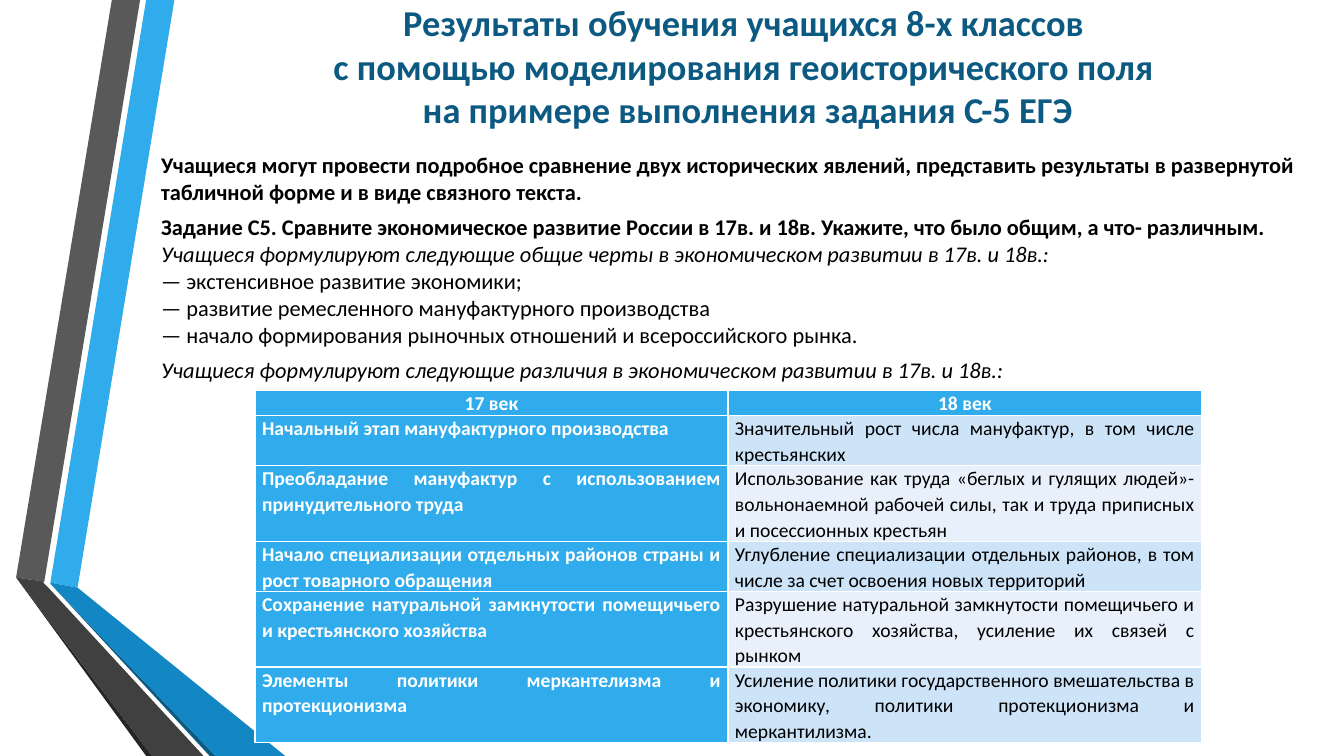
from pptx import Presentation
from pptx import util as u
from pptx.dml.color import RGBColor
from pptx.enum import text

PX = 9144
FONT = "Calibri"
WHITE = RGBColor(0xFF, 0xFF, 0xFF)
BLACK = RGBColor(0x00, 0x00, 0x00)
NAVY = RGBColor(0x0C, 0x5A, 0x82)
BLUE = RGBColor(0x12, 0x87, 0xC3)
SKY = RGBColor(0x30, 0xAC, 0xEC)
SHADE = RGBColor(0x26, 0x26, 0x26)
CHARCOAL = RGBColor(0x40, 0x40, 0x40)
GREY = RGBColor(0x59, 0x59, 0x59)
BAND_DARK = RGBColor(0xCD, 0xE3, 0xF8)
BAND_LIGHT = RGBColor(0xE8, 0xF1, 0xFB)

RIBBONS = [
    (SKY, [(50, 578), (77, 583), (173, 0), (145, 0)]),
    (GREY, [(139, 0), (111, 0), (16, 573), (44, 577)]),
    (SHADE, [(16, 573), (145, 750), (151, 750)]),
    (NAVY, [(50, 579), (208, 750), (214, 750)]),
    (BLUE, [(50, 579), (214, 750), (283, 750), (77, 583), (50, 578)]),
    (CHARCOAL, [(202, 750), (48, 583), (43, 578), (44, 577), (16, 573), (151, 750)]),
]

TITLE = (
    "Результаты обучения учащихся 8-х классов \v"
    "с помощью моделирования геоисторического поля \v"
    "на примере выполнения задания С-5 ЕГЭ"
)

BODY = [
    ("Учащиеся могут провести подробное сравнение двух исторических явлений, "
     "представить результаты в развернутой", "bold", 0),
    ("табличной форме и в виде связного текста.", "bold", 0),
    ("Задание С5. Сравните экономическое развитие России в 17в. и 18в. "
     "Укажите, что было общим, а что- различным.", "bold", 6),
    ("Учащиеся формулируют следующие общие черты в экономическом развитии "
     "в 17в. и 18в.:", "italic", 0),
    ("— экстенсивное развитие экономики;", "plain", 0),
    ("— развитие ремесленного мануфактурного производства", "plain", 0),
    ("— начало формирования рыночных отношений и всероссийского рынка.", "plain", 0),
    ("Учащиеся формулируют следующие различия в экономическом развитии "
     "в 17в. и 18в.:", "italic", 6),
]

COLUMNS = [469, 470]
ROW_HEIGHTS = [23, 48, 72, 48, 72, 72]
CENTURIES = [
    ("17 век", "18 век"),
    ("Начальный этап мануфактурного производства",
     "Значительный рост числа мануфактур, в том числе крестьянских"),
    ("Преобладание мануфактур с использованием принудительного труда",
     "Использование как труда «беглых и гулящих людей»- вольнонаемной рабочей силы, "
     "так и труда приписных и посессионных крестьян"),
    ("Начало специализации отдельных районов страны и рост товарного обращения",
     "Углубление специализации отдельных районов, в том числе за счет освоения "
     "новых территорий"),
    ("Сохранение натуральной замкнутости помещичьего и крестьянского хозяйства",
     "Разрушение натуральной замкнутости помещичьего и крестьянского хозяйства, "
     "усиление их связей с рынком"),
    ("Элементы политики меркантелизма и протекционизма",
     "Усиление политики государственного вмешательства в экономику, политики "
     "протекционизма и меркантилизма."),
]


class SlideBuilder:
    def __init__(self, page, font):
        self.page = page
        self.font = font

    def format(self, para, size, color, bold=False, italic=False):
        for span in para.runs:
            span.font.name = self.font
            span.font.size = u.Pt(size)
            span.font.color.rgb = color
            span.font.bold = bold
            span.font.italic = italic

    def ribbon(self, color, points):
        outline = self.page.shapes.build_freeform(*points[0], scale=PX)
        outline.add_line_segments(points[1:], close=True)
        shape = outline.convert_to_shape()
        shape.shadow.inherit = False
        shape.fill.solid()
        shape.fill.fore_color.rgb = color
        shape.line.fill.background()

    def text_frame(self, left, top, width, height):
        box = self.page.shapes.add_textbox(left * PX, top * PX, width * PX, height * PX)
        frame = box.text_frame
        frame.word_wrap = True
        frame.vertical_anchor = text.MSO_ANCHOR.MIDDLE
        return frame

    def title(self, words, *place):
        para = self.text_frame(*place).paragraphs[0]
        para.text = words
        para.alignment = text.PP_ALIGN.CENTER
        self.format(para, 26, NAVY, bold=True)

    def body(self, lines, *place):
        frame = self.text_frame(*place)
        frame.text = "\n".join(words for words, style, gap in lines)
        for para, (words, style, gap) in zip(frame.paragraphs, lines):
            para.space_before = u.Pt(gap)
            para._p.get_or_add_pPr().set("indent", str(49 * PX))
            self.format(para, 16, BLACK, style == "bold", style == "italic")

    def table(self, rows, left, top):
        table = self.page.shapes.add_table(
            len(rows), len(COLUMNS), left * PX, top * PX,
            sum(COLUMNS) * PX, sum(ROW_HEIGHTS) * PX).table
        table.first_col = True
        for column, width in zip(table.columns, COLUMNS):
            column.width = width * PX
        for row, height in zip(table.rows, ROW_HEIGHTS):
            row.height = height * PX
        for r, row in enumerate(rows):
            for c, words in enumerate(row):
                self.cell(table.cell(r, c), words, r, c)

    def cell(self, cell, words, r, c):
        heading = r == 0 or c == 0
        cell.margin_left = cell.margin_right = 7 * PX
        cell.margin_top = cell.margin_bottom = 0
        cell.fill.solid()
        band = BAND_DARK if r % 2 else BAND_LIGHT
        cell.fill.fore_color.rgb = SKY if heading else band
        para = cell.text_frame.paragraphs[0]
        para.text = words
        para.line_spacing = 1.07
        para.alignment = text.PP_ALIGN.JUSTIFY if r else text.PP_ALIGN.CENTER
        self.format(para, 14, WHITE if heading else BLACK, bold=heading)


def main():
    deck = Presentation()
    deck.slide_width = 1333 * PX
    deck.slide_height = 750 * PX
    builder = SlideBuilder(deck.slides.add_slide(deck.slide_layouts[6]), FONT)
    for color, points in RIBBONS:
        builder.ribbon(color, points)
    builder.title(TITLE, 168, 15, 1148, 100)
    builder.table(CENTURIES, 253, 387)
    builder.body(BODY, 101, 144, 1213, 242)
    deck.save("out.pptx")


if __name__ == "__main__":
    main()
